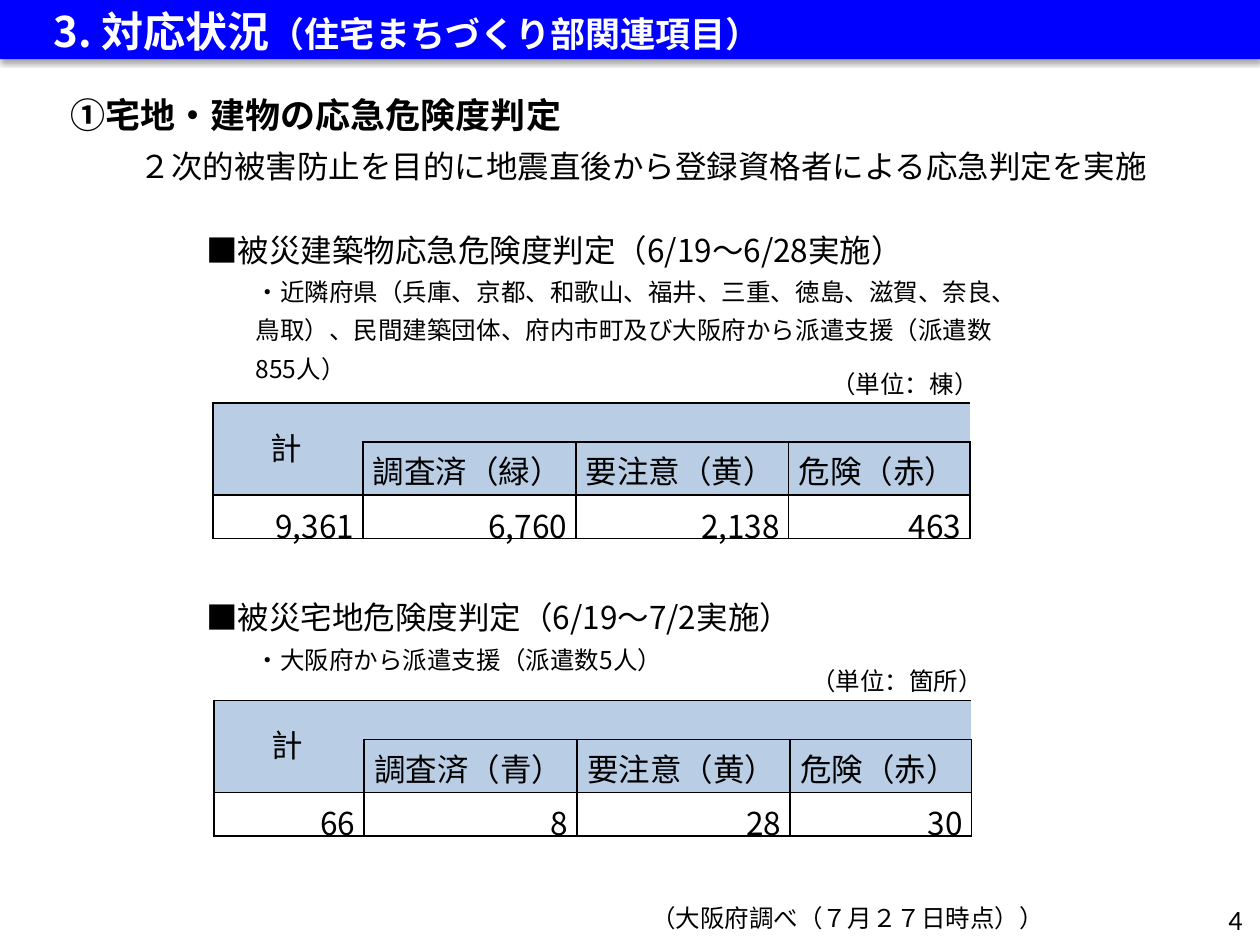
from dataclasses import dataclass

from lxml.etree import SubElement
from pptx import Presentation
from pptx.dml.color import RGBColor
from pptx.enum.shapes import MSO_SHAPE
from pptx.enum.text import MSO_ANCHOR, MSO_AUTO_SIZE, PP_ALIGN
from pptx.oxml.ns import qn
from pptx.util import Inches, Pt


@dataclass(frozen=True)
class Theme:
    japanese: str = "Noto Sans CJK JP"
    latin: str = "Calibri"
    banner: str = "0000FF"
    header: str = "B9CDE5"
    ink: str = "000000"
    white: str = "FFFFFF"
    title: int = 24
    heading: int = 20
    body: int = 18
    number: int = 16
    small: int = 14


class SlideBuilder:
    def __init__(self, slide, theme):
        self.slide = slide
        self.theme = theme

    def add_run(self, paragraph, text, size, color=None, bold=False, font=None):
        run = paragraph.add_run()
        run.text = text
        run.font.size = Pt(size)
        run.font.bold = bold
        run.font.name = font or self.theme.japanese
        run.font.color.rgb = RGBColor.from_string(color or self.theme.ink)
        properties = run.font._element
        SubElement(properties, qn("a:ea"), typeface=run.font.name)

    def set_insets(self, target, left, top, right, bottom):
        target.margin_left, target.margin_top = Inches(left), Inches(top)
        target.margin_right, target.margin_bottom = Inches(right), Inches(bottom)

    def set_indent(self, paragraph, indent):
        properties = paragraph._p.get_or_add_pPr()
        properties.set("marL", str(Inches(indent)))
        properties.set("indent", "0")

    def add_banner(self, runs):
        theme = self.theme
        shape = self.slide.shapes.add_shape(
            MSO_SHAPE.RECTANGLE, 0, 0, Inches(10), Inches(0.47))
        shape.fill.solid()
        shape.fill.fore_color.rgb = RGBColor.from_string(theme.banner)
        shape.line.fill.background()
        shape.shadow.inherit = False
        effects = shape._element.spPr.find(qn("a:effectLst"))
        shadow = SubElement(effects, qn("a:outerShdw"), blurRad=str(Pt(3.1)),
                            dist=str(Pt(1.8)), dir="5400000", rotWithShape="0")
        color = SubElement(shadow, qn("a:srgbClr"), val=theme.ink)
        SubElement(color, qn("a:alpha"), val="35000")
        frame = shape.text_frame
        frame.word_wrap = True
        frame.vertical_anchor = MSO_ANCHOR.BOTTOM
        self.set_insets(frame, 0.1, 0.05, 0.1, 0.03)
        paragraph = frame.paragraphs[0]
        paragraph.alignment = PP_ALIGN.LEFT
        self.set_indent(paragraph, 0.33)
        for text, size in runs:
            self.add_run(paragraph, text, size, theme.white, bold=True)

    def add_text(self, box, lines, spacing=1.3, inset=0.12):
        shape = self.slide.shapes.add_textbox(*map(Inches, box))
        frame = shape.text_frame
        frame.word_wrap = True
        frame.auto_size = MSO_AUTO_SIZE.SHAPE_TO_FIT_TEXT
        self.set_insets(frame, 0.1, inset, 0.1, inset)
        for index, (text, size, indent, bold) in enumerate(lines):
            paragraph = frame.add_paragraph() if index else frame.paragraphs[0]
            paragraph.line_spacing = spacing
            self.set_indent(paragraph, indent)
            self.add_run(paragraph, text, size, bold=bold)
        return frame

    def add_section(self, box, heading, detail):
        theme = self.theme
        self.add_text(box, [(heading, theme.body, 0, False),
                            (detail, theme.small, 0.39, False)])

    def add_unit(self, box, text):
        self.add_text(box, [(text, self.theme.small, 0, False)], spacing=1.2)

    def add_source(self, box, text):
        lines = [(text, self.theme.small, 0, False)]
        frame = self.add_text(box, lines, spacing=1.0, inset=0.05)
        frame.paragraphs[0].space_before = Pt(12)

    def add_page_number(self, box, text):
        shape = self.slide.shapes.add_textbox(*map(Inches, box))
        frame = shape.text_frame
        frame.word_wrap = True
        frame.vertical_anchor = MSO_ANCHOR.MIDDLE
        paragraph = frame.paragraphs[0]
        paragraph.alignment = PP_ALIGN.RIGHT
        self.add_run(paragraph, text, self.theme.number, font=self.theme.latin)

    def add_borders(self, cell, sides):
        properties = cell._tc.get_or_add_tcPr()
        for side in "LRTB":
            line = SubElement(properties, qn(f"a:ln{side}"), w=str(Pt(1)))
            if side in sides:
                fill = SubElement(line, qn("a:solidFill"))
                SubElement(fill, qn("a:srgbClr"), val=self.theme.ink)
            else:
                SubElement(line, qn("a:noFill"))

    def fill_cell(self, cell, text, is_header):
        cell.vertical_anchor = MSO_ANCHOR.MIDDLE
        if is_header:
            cell.fill.solid()
            cell.fill.fore_color.rgb = RGBColor.from_string(self.theme.header)
        else:
            cell.fill.background()
        if not text:
            self.set_insets(cell, 0, 0, 0, 0)
            return
        paragraph = cell.text_frame.paragraphs[0]
        if is_header:
            self.set_insets(cell, 0.04, 0.04, 0.07, 0.08)
            paragraph.alignment = PP_ALIGN.CENTER
        else:
            self.set_insets(cell, 0.07, 0, 0.07, 0)
            paragraph.alignment = PP_ALIGN.RIGHT
            paragraph.line_spacing = 1.15
        self.add_run(paragraph, text, self.theme.body)

    def add_result_table(self, left, top, categories, values):
        widths, heights = (1.19, 1.69, 1.69, 1.44), (0.31, 0.31, 0.28)
        frame = self.slide.shapes.add_table(
            3, 4, Inches(left), Inches(top), Inches(sum(widths)), Inches(1.08))
        table = frame.table
        table.first_row = table.horz_banding = False
        for column, width in zip(table.columns, widths):
            column.width = Inches(width)
        for row, height in zip(table.rows, heights):
            row.height = Inches(height)
        frame.height = Inches(1.08)
        table.cell(0, 0).merge(table.cell(1, 0))
        table.cell(0, 1).merge(table.cell(0, 3))
        rows = [("計", "", "", ""), ("", *categories), values]
        top_sides = ("LTB", "TB", "TB", "TBR")
        for row, texts in enumerate(rows):
            for column, text in enumerate(texts):
                cell = table.cell(row, column)
                self.add_borders(cell, "LRTB" if row else top_sides[column])
                self.fill_cell(cell, text, is_header=row < 2)


def main():
    presentation = Presentation()
    presentation.slide_width, presentation.slide_height = Inches(10), Inches(7.5)
    slide = presentation.slides.add_slide(presentation.slide_layouts[6])
    theme = Theme()
    builder = SlideBuilder(slide, theme)

    builder.add_banner([("3. 対応状況", theme.title),
                        ("（住宅まちづくり部関連項目）", theme.heading)])
    builder.add_text((0.18, 0.52, 9.64, 1.11), [
        ("①宅地・建物の応急危険度判定", theme.heading, 0.28, True),
        ("２次的被害防止を目的に地震直後から登録資格者による応急判定を実施",
         theme.body, 0.83, False)])

    builder.add_result_table(1.69, 3.2, ("調査済（緑）", "要注意（黄）", "危険（赤）"),
                             ("9,361", "6,760", "2,138", "463"))
    builder.add_section(
        (1.54, 1.62, 6.53, 1.64), "■被災建築物応急危険度判定（6/19～6/28実施）",
        "・近隣府県（兵庫、京都、和歌山、福井、三重、徳島、滋賀、奈良、鳥取）、"
        "民間建築団体、府内市町及び大阪府から派遣支援（派遣数855人）")
    builder.add_unit((6.5, 2.76, 1.42, 0.52), "（単位：棟）")

    builder.add_section(
        (1.54, 4.54, 8.46, 0.94), "■被災宅地危険度判定（6/19～7/2実施）",
        "・大阪府から派遣支援（派遣数5人）")
    builder.add_result_table(1.7, 5.56, ("調査済（青）", "要注意（黄）", "危険（赤）"),
                             ("66", "8", "28", "30"))
    builder.add_unit((6.34, 5.12, 1.73, 0.52), "（単位：箇所）")

    builder.add_page_number((7.63, 7.1, 2.33, 0.4), "4")
    builder.add_source((5.07, 7.12, 4.26, 0.34), "（大阪府調べ（７月２７日時点））")
    presentation.save("out.pptx")


if __name__ == "__main__":
    main()
